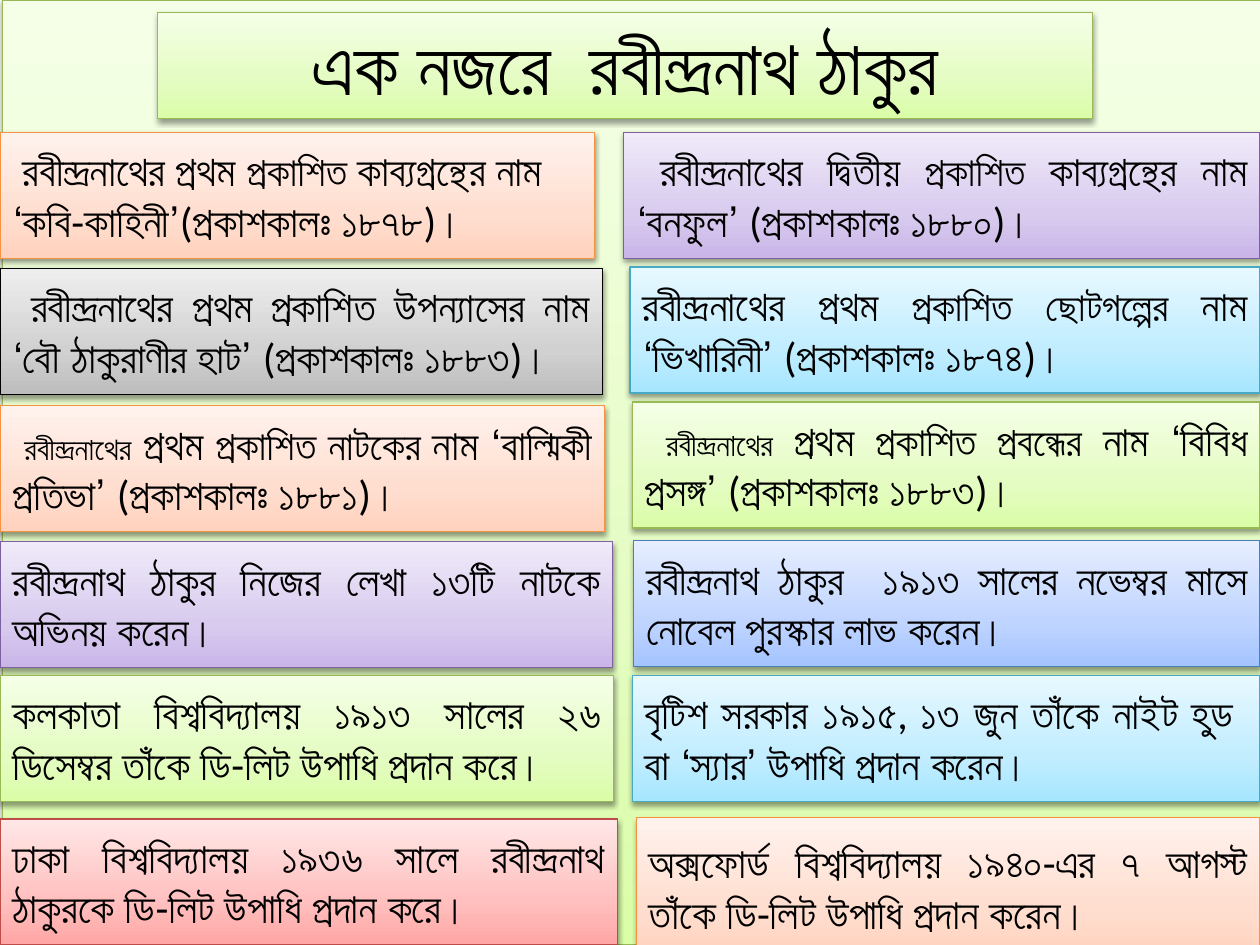
from copy import deepcopy
from dataclasses import dataclass

from lxml.etree import SubElement
from pptx import Presentation
from pptx.dml.color import RGBColor as Rgb
from pptx.enum.shapes import MSO_SHAPE as Shape
from pptx.enum.text import MSO_ANCHOR as Anchor, PP_ALIGN as Align
from pptx.oxml.ns import qn
from pptx.util import Inches, Pt


@dataclass(frozen=True)
class Tone:
    line: str
    stops: tuple  # from bottom to top


class Theme:
    font, pad = "Calibri", "Lato"
    ink = "000000"
    head, body, mid, small = 44, 24, 23, 18
    places = 0, 0.35, 1
    green = Tone("98B955", ("DAFDA7", "E4FCC2", "F5FFE7"))
    peach = Tone("F69240", ("FFD2BD", "FFDED0", "FFF2ED"))
    plum = Tone("7D60A0", ("C9B5E8", "D8CBEE", "F0EAF9"))
    grey = Tone("000000", ("BDBDBD", "D1D1D1", "EEEEEE"))
    aqua = Tone("46AAC5", ("A7E6FF", "C1EDFF", "E7F8FF"))
    blue = Tone("4B7EBC", ("A4C4FF", "BFD4FF", "E6EEFF"))
    red = Tone("BF4C48", ("FFA6A5", "FFC0BF", "FFE7E7"))


T = Theme
WIDE, HIGH = 10, 7.5
ROW = 1
LEAD = (" ", T.body, T.pad)  # small indent before some facts

# Left column: tone, top, right edge, text runs
LEFT = [
    (T.peach, 1.05, 4.72, [
        LEAD, ("রবীন্দ্রনাথের প্রথম ", T.body), ("প্রকাশিত", T.mid),
        (" কাব্যগ্রন্থের নাম ‘কবি-কাহিনী’(প্রকাশকালঃ ১৮৭৮)।", T.body)]),
    (T.grey, 2.13, 4.78, [
        LEAD, ("রবীন্দ্রনাথের প্রথম প্রকাশিত উপন্যাসের নাম "
               "‘বৌ ঠাকুরাণীর হাট’ (প্রকাশকালঃ ১৮৮৩)।", T.body)]),
    (T.peach, 3.22, 4.8, [
        LEAD, ("রবীন্দ্রনাথের", T.small), (" প্রথম ", T.body),
        ("প্রকাশিত নাটকের", T.mid),
        (" নাম ‘বাল্মিকী প্রতিভা’ (প্রকাশকালঃ ১৮৮১)।", T.body)]),
    (T.plum, 4.3, 4.86, [
        ("রবীন্দ্রনাথ ঠাকুর নিজের লেখা ১৩টি নাটকে অভিনয় করেন।", T.body)]),
    (T.green, 5.36, 4.87, [
        ("কলকাতা বিশ্ববিদ্যালয় ১৯১৩ সালের ২৬ ডিসেম্বর তাঁকে "
         "ডি-লিট উপাধি প্রদান করে।", T.body)]),
    (T.red, 6.5, 4.9, [
        ("ঢাকা বিশ্ববিদ্যালয় ১৯৩৬ সালে রবীন্দ্রনাথ ঠাকুরকে "
         "ডি-লিট উপাধি প্রদান করে।", T.body)]),
]

# Right column: tone, top, left edge, text runs
RIGHT = [
    (T.plum, 1.05, 4.95, [
        LEAD, ("রবীন্দ্রনাথের দ্বিতীয় ", T.body), ("প্রকাশিত", T.mid),
        (" কাব্যগ্রন্থের নাম ‘বনফুল’ (প্রকাশকালঃ ১৮৮০)।", T.body)]),
    (T.aqua, 2.12, 5, [
        ("রবীন্দ্রনাথের প্রথম ", T.body), ("প্রকাশিত ছোটগল্পের", T.mid),
        (" নাম ‘ভিখারিনী’ (প্রকাশকালঃ ১৮৭৪)।", T.body)]),
    (T.green, 3.19, 5.02, [
        LEAD, ("রবীন্দ্রনাথের", T.small), (" প্রথম ", T.body),
        ("প্রকাশিত প্রবন্ধের", T.mid),
        (" নাম ‘বিবিধ প্রসঙ্গ’ (প্রকাশকালঃ ১৮৮৩)।", T.body)]),
    (T.blue, 4.29, 5.03, [
        ("রবীন্দ্রনাথ ঠাকুর  ১৯১৩ সালের নভেম্বর মাসে "
         "নোবেল পুরস্কার লাভ করেন।", T.body)]),
    (T.aqua, 5.36, 5.02, [
        ("বৃটিশ সরকার ১৯১৫, ১৩ জুন তাঁকে নাইট হুড  বা ‘স্যার’ "
         "উপাধি প্রদান করেন।", T.body)]),
    (T.peach, 6.49, 5.05, [
        ("অক্সফোর্ড বিশ্ববিদ্যালয় ১৯৪০-এর ৭ আগস্ট তাঁকে "
         "ডি-লিট উপাধি প্রদান করেন।", T.body)]),
]


def add_glow(shape):
    """Soft shadow straight below the shape."""
    shape.shadow.inherit = False
    effects = shape._element.spPr.find(qn("a:effectLst"))
    drop = SubElement(effects, qn("a:outerShdw"), blurRad=str(Pt(3.1)),
                      dist=str(Pt(1.6)), dir="5400000", rotWithShape="0")
    tint = SubElement(drop, qn("a:srgbClr"), val=T.ink)
    SubElement(tint, qn("a:alpha"), val="38000")


def add_panel(slide, box, tone):
    shape = slide.shapes.add_shape(Shape.RECTANGLE, *map(Inches, box))
    fill = shape.fill
    fill.gradient()
    fill.gradient_angle = 90
    stops = shape._element.spPr.find(".//" + qn("a:gsLst"))
    stops.append(deepcopy(stops[0]))
    for stop, place, color in zip(fill.gradient_stops, T.places, tone.stops):
        stop.position = place
        stop.color.rgb = Rgb.from_string(color)
    shape.line.color.rgb = Rgb.from_string(tone.line)
    shape.line.width = Pt(0.75)
    add_glow(shape)
    return shape


def add_text(shape, runs, align, anchor):
    frame = shape.text_frame
    frame.word_wrap = True
    frame.vertical_anchor = anchor
    para = frame.paragraphs[0]
    para.alignment = align
    para.font.color.rgb = Rgb.from_string(T.ink)
    for text, size, *face in runs:
        run = para.add_run()
        run.text = text
        run.font.size = Pt(size)
        run.font.name = face[0] if face else T.font
        run.font.color.rgb = Rgb.from_string(T.ink)


def add_title(slide, box):
    add_text(add_panel(slide, box, T.green),
             [("এক নজরে  রবীন্দ্রনাথ ঠাকুর", T.head)],
             Align.CENTER, Anchor.TOP)


def add_fact(slide, box, tone, runs, align=Align.JUSTIFY):
    add_text(add_panel(slide, box, tone), runs, align, Anchor.MIDDLE)


def add_left(slide, facts):
    for tone, top, edge, runs in facts:
        align = Align.LEFT if runs is facts[0][3] else Align.JUSTIFY
        add_fact(slide, (0, top, edge, ROW), tone, runs, align)


def add_right(slide, facts):
    for tone, top, edge, runs in facts:
        tall = 1.1 if runs is facts[-1][3] else ROW
        add_fact(slide, (edge, top, WIDE - edge, tall), tone, runs)


def main():
    deck = Presentation()
    deck.slide_width, deck.slide_height = Inches(WIDE), Inches(HIGH)
    slide = deck.slides.add_slide(deck.slide_layouts[6])
    # Backdrop, then both columns of facts, then the title
    add_panel(slide, (0.02, 0, WIDE, HIGH), T.green)
    add_left(slide, LEFT)
    add_right(slide, RIGHT)
    add_title(slide, (1.25, 0.1, 7.42, 0.84))
    deck.save("out.pptx")


if __name__ == "__main__":
    main()
